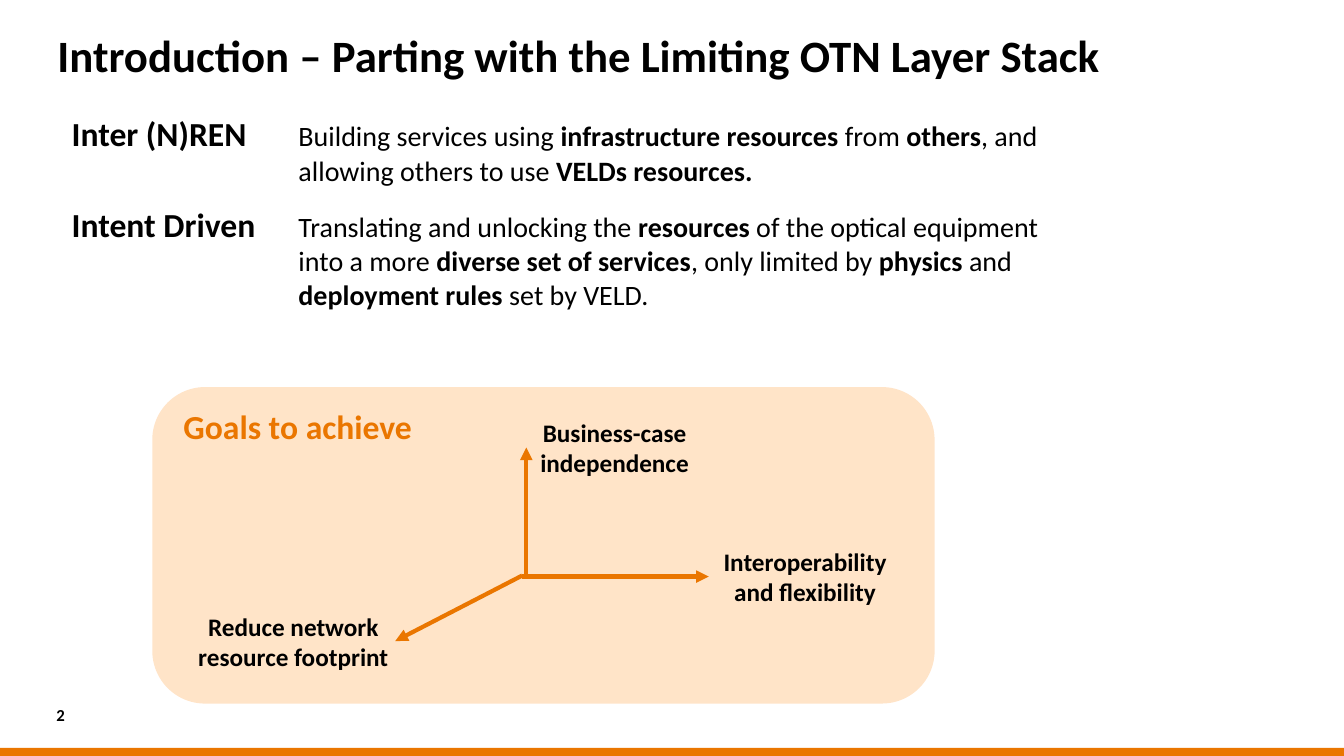
"""Builds the introduction slide on leaving the OTN layer stack, with its three goals."""
from pptx import Presentation
from pptx.dml.color import RGBColor
from pptx.enum.shapes import MSO_CONNECTOR, MSO_SHAPE
from pptx.enum.text import MSO_ANCHOR, PP_ALIGN
from pptx.oxml.ns import qn
from pptx.util import Inches, Pt
from lxml import etree

STRAIGHT = MSO_CONNECTOR.STRAIGHT
RECT, ROUNDED = MSO_SHAPE.RECTANGLE, MSO_SHAPE.ROUNDED_RECTANGLE
LEFT, CENTER = PP_ALIGN.LEFT, PP_ALIGN.CENTER
TOP, MIDDLE = MSO_ANCHOR.TOP, MSO_ANCHOR.MIDDLE
COLORS = {"text": "000000", "accent": "EA7600", "panel": "FFE4C8"}
FONT = "Calibri"
WIDTH, HEIGHT = Inches(13.33), Inches(7.5)

# Places are percentages of the slide's width and height.
BLOCKS = [
    (RECT, (0, 98.93, 100, 1.07), "accent"),
    (ROUNDED, (11.33, 51.2, 58.21, 41.87), "panel"),
]
TITLE = ["Introduction – Parting with the Limiting OTN Layer Stack"]
TITLE_PLACE = (4.28, 4, 84.25, 8.8)
TITLE_INSET = Inches(0.08)
TERMS_PLACE = (5.33, 14.93, 73.59, 31.47)
TERM_COLUMN = Inches(2.25)
TERMS = [
    ("Inter (N)REN",
     "Building services using **infrastructure resources** from **others**, "
     "and allowing others to use **VELDs resources.**"),
    ("Intent Driven",
     "Translating and unlocking the **resources** of the optical equipment into a more "
     "**diverse set of services**, only limited by **physics** and "
     "**deployment rules** set by VELD."),
]
AXES = [
    ((39.16, 76.13), (39.16, 59.2)),
    ((38.86, 76.27), (52.74, 76.27)),
    ((38.86, 76.13), (29.41, 84.8)),
]
LABELS = [
    (["2"], (4.2, 92.93, 3.23, 3.2), 12, "text", LEFT, MIDDLE, True),
    (["Interoperability and flexibility"], (52.81, 72.27, 14.18, 8.13),
     18, "text", CENTER, TOP, True),
    (["Business-case", "independence"], (40.14, 55.2, 11.18, 8.13),
     18, "text", CENTER, TOP, False),
    (["Reduce network", "resource footprint"], (14.7, 80.8, 14.25, 8.13),
     18, "text", CENTER, TOP, False),
    (["Goals to achieve"], (13.65, 53.73, 17.18, 5.33), 24, "accent", LEFT, TOP, False),
]


def emu(place):
    return [round(share * (HEIGHT if i % 2 else WIDTH) / 100)
            for i, share in enumerate(place)]


def add_run(paragraph, words, size, color="text", bold=True):
    run = paragraph.add_run()
    run.text = words
    for key, value in {"name": FONT, "size": Pt(size), "bold": bold}.items():
        setattr(run.font, key, value)
    run.font.color.rgb = RGBColor.from_string(COLORS[color])


def add_frame(slide, place, anchor=TOP, wrap=True, inset=0):
    frame = slide.shapes.add_textbox(*emu(place)).text_frame
    settings = {"margin_left": 0, "margin_right": 0, "margin_top": inset,
                "margin_bottom": 0, "word_wrap": wrap, "vertical_anchor": anchor}
    for key, value in settings.items():
        setattr(frame, key, value)
    return frame


def add_paragraph(frame, index):
    return frame.add_paragraph() if index else frame.paragraphs[0]


def add_label(slide, lines, place, size, color, align, anchor, wrap, inset=0):
    frame = add_frame(slide, place, anchor, wrap, inset)
    for i, line in enumerate(lines):
        paragraph = add_paragraph(frame, i)
        paragraph.alignment = align
        add_run(paragraph, line, size, color)
    return frame


def add_terms(slide):
    frame = add_frame(slide, TERMS_PLACE)
    for i, (term, meaning) in enumerate(TERMS):
        paragraph = add_paragraph(frame, i)
        properties = paragraph._p.get_or_add_pPr()
        properties.set("marL", str(TERM_COLUMN))
        properties.set("indent", str(-TERM_COLUMN))
        paragraph.space_before = Pt(6 if i else 0)
        paragraph.space_after = Pt(6)
        add_run(paragraph, term, 24)
        for j, words in enumerate(("\t" + meaning).split("**")):
            add_run(paragraph, words, 20, bold=j % 2 == 1)


def add_axis(slide, start, end):
    axis = slide.shapes.add_connector(STRAIGHT, *emu(start + end))
    axis.line.color.rgb = RGBColor.from_string(COLORS["accent"])
    axis.line.width = Pt(3)
    etree.SubElement(axis.line._get_or_add_ln(), qn("a:tailEnd"), type="triangle")
    etree.SubElement(axis._element.spPr, qn("a:effectLst"))


def main():
    deck = Presentation()
    deck.slide_width, deck.slide_height = WIDTH, HEIGHT
    slide = deck.slides.add_slide(deck.slide_layouts[6])
    for kind, place, color in BLOCKS:
        block = slide.shapes.add_shape(kind, *emu(place))
        block.shadow.inherit = False
        block.fill.solid()
        block.fill.fore_color.rgb = RGBColor.from_string(COLORS[color])
        block.line.fill.background()
    title = add_label(slide, TITLE, TITLE_PLACE, 32, "text", LEFT, TOP, True, TITLE_INSET)
    title.paragraphs[0].line_spacing = 0.8
    add_terms(slide)
    for start, end in AXES:
        add_axis(slide, start, end)
    for label in LABELS:
        add_label(slide, *label)
    deck.save("out.pptx")


if __name__ == "__main__":
    main()
